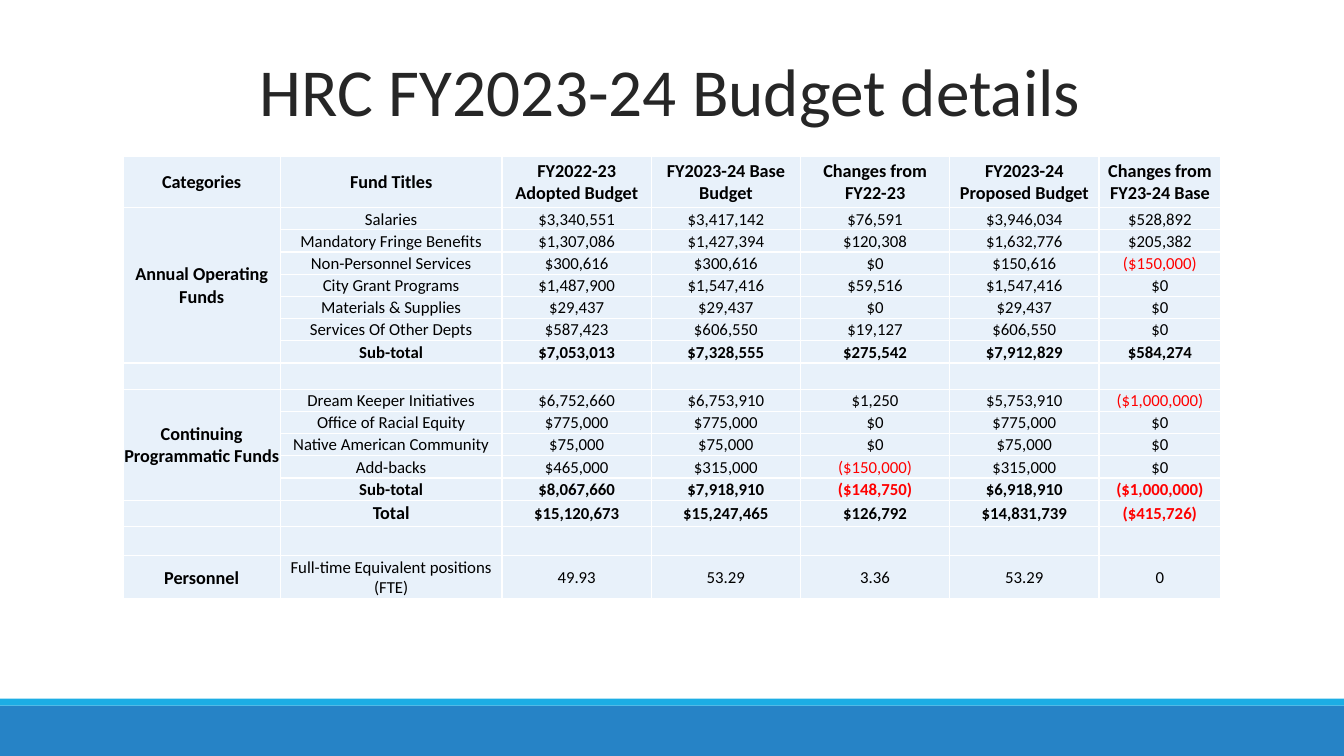
"""Build the budget details slide."""
from dataclasses import dataclass
from typing import Any

from lxml.etree import SubElement as Sub
from pptx import Presentation
from pptx.dml.color import RGBColor as Rgb
from pptx.enum.shapes import MSO_SHAPE as Form
from pptx.enum.text import MSO_ANCHOR as Anchor, MSO_AUTO_SIZE as Fit, PP_ALIGN as Align
from pptx.oxml.ns import qn
from pptx.util import Inches, Pt


@dataclass(frozen=True)
class Theme:
    font: str = "Calibri"
    title: int = 48
    head: int = 13
    body: int = 12
    ink: str = "000000"
    dark: str = "262626"
    loss: str = "FF0000"
    cell: str = "E8F1FA"
    rule: str = "FFFFFF"
    band: str = "2683C6"
    edge: str = "1CADE4"


@dataclass(frozen=True)
class Box:
    left: float
    top: float
    width: float
    height: float


@dataclass(frozen=True)
class Row:
    cells: tuple[str, ...] = ()
    group: str = ""
    span: int = 1
    rise: int = 22
    bold: bool = False
    size: int = 12


LOOK = Theme()
WIDE, HIGH = Inches(13.33), Inches(7.5)
TITLE = Box(14.63, 5.33, 70.52, 12.13)
GRID = Box(9.15, 20.67, 81.7, 58.6)
BANDS = {LOOK.band: Box(0, 93.33, 100, 6.67), LOOK.edge: Box(0, 92.4, 100, 0.93)}
COLS = (156, 220, 148, 148, 148, 148, 121)
ROWS = (
    Row(("Fund Titles", "FY2022-23 Adopted Budget", "FY2023-24 Base Budget", "Changes from FY22-23",
         "FY2023-24 Proposed Budget", "Changes from FY23-24 Base"), "Categories", rise=51, bold=True, size=LOOK.head),
    Row(("Salaries", "$3,340,551", "$3,417,142", "$76,591", "$3,946,034", "$528,892"),
        "Annual Operating Funds", span=7),
    Row(("Mandatory Fringe Benefits", "$1,307,086", "$1,427,394", "$120,308", "$1,632,776", "$205,382")),
    Row(("Non-Personnel Services", "$300,616", "$300,616", "$0", "$150,616", "($150,000)")),
    Row(("City Grant Programs", "$1,487,900", "$1,547,416", "$59,516", "$1,547,416", "$0")),
    Row(("Materials & Supplies", "$29,437", "$29,437", "$0", "$29,437", "$0")),
    Row(("Services Of Other Depts", "$587,423", "$606,550", "$19,127", "$606,550", "$0")),
    Row(("Sub-total", "$7,053,013", "$7,328,555", "$275,542", "$7,912,829", "$584,274"), bold=True),
    Row(rise=26),
    Row(("Dream Keeper Initiatives", "$6,752,660", "$6,753,910", "$1,250", "$5,753,910", "($1,000,000)"),
        "Continuing Programmatic Funds", span=5),
    Row(("Office of Racial Equity", "$775,000", "$775,000", "$0", "$775,000", "$0")),
    Row(("Native American Community", "$75,000", "$75,000", "$0", "$75,000", "$0")),
    Row(("Add-backs", "$465,000", "$315,000", "($150,000)", "$315,000", "$0")),
    Row(("Sub-total", "$8,067,660", "$7,918,910", "($148,750)", "$6,918,910", "($1,000,000)"), bold=True),
    Row(("Total", "$15,120,673", "$15,247,465", "$126,792", "$14,831,739", "($415,726)"), rise=26, bold=True),
    Row(rise=29),
    Row(("Full-time Equivalent positions (FTE)", "49.93", "53.29", "3.36", "53.29", "0"), "Personnel", rise=43),
)


def put(item: Any, **values: Any) -> None:
    """Set each named value on an item."""
    for name, value in values.items():
        setattr(item, name, value)


def place(box: Box) -> dict[str, int]:
    """Turn percent shares of the slide into lengths."""
    return {"left": int(WIDE * box.left / 100), "top": int(HIGH * box.top / 100),
            "width": int(WIDE * box.width / 100), "height": int(HIGH * box.height / 100)}


def write(frame: Any, text: str, size: int, color: str, bold: bool = False) -> None:
    """Write one centred line of text."""
    line = frame.paragraphs[0]
    line.alignment = Align.CENTER
    if not text:
        Sub(line._p, qn("a:endParaRPr"), sz=str(size * 100))
        return
    run = line.add_run()
    run.text = text
    put(run.font, name=LOOK.font, size=Pt(size), bold=bold)
    run.font.color.rgb = Rgb.from_string(color)


def frame(cell: Any) -> None:
    """Give a cell its borders, fill and margins."""
    props = cell._tc.get_or_add_tcPr()
    for side in "LRTB":
        edge = Sub(props, qn(f"a:ln{side}"), w=str(Pt(1)))
        Sub(Sub(edge, qn("a:solidFill")), qn("a:srgbClr"), val=LOOK.rule)
    cell.fill.solid()
    cell.fill.fore_color.rgb = Rgb.from_string(LOOK.cell)
    thin = Inches(0.01)
    put(cell, margin_left=thin, margin_right=thin, margin_top=thin, margin_bottom=0,
        vertical_anchor=Anchor.MIDDLE)


def draw_band(slide: Any, color: str, box: Box) -> None:
    """Draw one footer band."""
    band = slide.shapes.add_shape(Form.RECTANGLE, **place(box))
    band.shadow.inherit = False
    band.fill.solid()
    band.fill.fore_color.rgb = Rgb.from_string(color)
    band.line.fill.background()


def draw_title(slide: Any) -> None:
    """Place and write the title."""
    title = slide.shapes.title
    put(title, **place(TITLE))
    put(title.text_frame, word_wrap=True, auto_size=Fit.SHAPE_TO_FIT_TEXT, vertical_anchor=Anchor.MIDDLE,
        margin_top=Inches(0.08), margin_bottom=Inches(0.02))
    write(title.text_frame, "HRC FY2023-24 Budget details", LOOK.title, LOOK.dark)


def draw_table(slide: Any) -> None:
    """Draw the budget table."""
    spot = place(GRID)
    table = slide.shapes.add_table(len(ROWS), len(COLS), **spot).table
    put(table, first_row=False, horz_banding=False)
    for col, share in zip(table.columns, COLS):
        col.width = int(spot["width"] * share / sum(COLS))
    total = sum(row.rise for row in ROWS)
    for r, row in enumerate(ROWS):
        table.rows[r].height = int(spot["height"] * row.rise / total)
        texts = (row.group, *(row.cells or [""] * (len(COLS) - 1)))
        for c, text in enumerate(texts):
            cell = table.cell(r, c)
            frame(cell)
            big = (c == 0 and text) or text == "Total"
            color = LOOK.loss if text.startswith("(") else LOOK.ink
            write(cell.text_frame, text, LOOK.head if big else row.size, color, row.bold or c == 0)
    for r, row in enumerate(ROWS):
        if row.span > 1:
            table.cell(r, 0).merge(table.cell(r + row.span - 1, 0))


def main() -> None:
    """Build and save the deck."""
    deck = Presentation()
    put(deck, slide_width=WIDE, slide_height=HIGH)
    slide = deck.slides.add_slide(deck.slide_layouts[5])
    for color, box in BANDS.items():
        draw_band(slide, color, box)
    draw_title(slide)
    draw_table(slide)
    deck.save("out.pptx")


if __name__ == "__main__":
    main()
